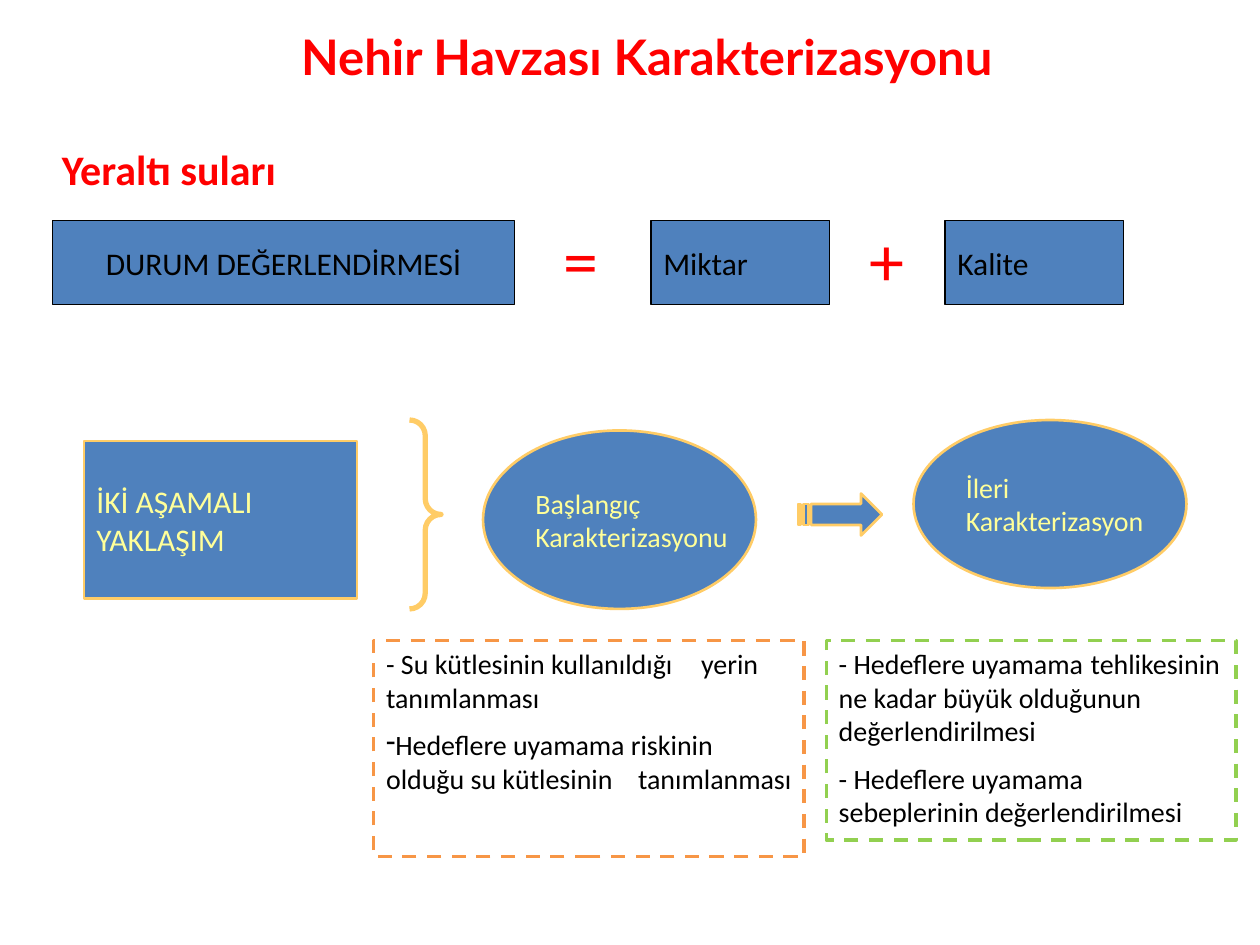
"""Build the groundwater characterisation slide on a grid of 120 by 90 cells."""
from lxml import etree
from pptx import Presentation
from pptx import util as u
from pptx.dml.color import RGBColor
from pptx.enum import dml, shapes, text
from pptx.oxml.ns import qn

COLORS = {"red": "FF0000", "black": "000000", "blue": "4F81BD", "gold": "FFCC66",
          "cream": "FFFF99", "white": "FFFFFF", "orange": "F79646", "green": "92D050"}
COLUMNS, ROWS = 120, 90
CELL = u.Inches(10) // COLUMNS
RECT, OVAL = shapes.MSO_SHAPE.RECTANGLE, shapes.MSO_SHAPE.OVAL
LEFT, CENTER = text.PP_ALIGN.LEFT, text.PP_ALIGN.CENTER

TITLE = ("Nehir Havzası Karakterizasyonu", (16.6, 1.9, 90, 6.8))
LABELS = [
    ("Yeraltı suları", (4.7, 13.1, 34, 6), 24, True),
    ("=", (52.5, 20, 14, 9.2), 40, False),
    ("+", (81.6, 20, 14, 9.2), 40, False),
]
TERMS = [
    ("DURUM DEĞERLENDİRMESİ", (5, 21, 44, 8), CENTER),
    ("Miktar", (62, 21, 17, 8), LEFT),
    ("Kalite", (90, 21, 17, 8), LEFT),
]
STAGES = [
    (OVAL, ["Başlangıç", "Karakterizasyonu"], (46, 41, 26, 17), 16),
    (OVAL, ["İleri", "Karakterizasyon"], (87, 40, 26, 16), 16),
    (RECT, ["İKİ AŞAMALI", "YAKLAŞIM"], (8, 42, 26, 15), 18),
]
TASKS = [
    ("orange", (35.6, 61, 41, 20.6), [
        ("- Su kütlesinin kullanıldığı \tyerin tanımlanması", False),
        ("Hedeflere uyamama riskinin \tolduğu su kütlesinin \ttanımlanması", True)]),
    ("green", (78.7, 61, 39, 19), [
        ("- Hedeflere uyamama \ttehlikesinin ne kadar büyük olduğunun değerlendirilmesi", False),
        ("- Hedeflere uyamama \tsebeplerinin değerlendirilmesi", False)]),
]
BRACE = (39, 40, 3, 18)
ARROW_ORIGIN = (76, 47)
ARROW_CONTOURS = [
    [(24, 0), (24, 4), (5, 4), (5, 12), (24, 12), (24, 16), (32, 8)],
    [(2, 4), (2, 12), (4, 12), (4, 4)],
    [(0, 4), (0, 12), (1, 12), (1, 4)],
]


def cells(values):
    return [round(value * CELL) for value in values]


def rgb(name):
    return RGBColor.from_string(COLORS[name])


def style(shape, fill, line, width):
    shape.shadow.inherit = False
    if fill:
        shape.fill.solid()
        shape.fill.fore_color.rgb = rgb(fill)
    else:
        shape.fill.background()
    shape.line.color.rgb = rgb(line)
    shape.line.width = u.Pt(width)


def write(shape, lines, size, color, align=LEFT, bold=False, wrap=True,
          anchor=text.MSO_ANCHOR.MIDDLE, font="Calibri"):
    frame = shape.text_frame
    frame.word_wrap = wrap
    frame.vertical_anchor = anchor
    frame.text = "\n".join(lines)
    for para in frame.paragraphs:
        para.alignment = align
        para.font.name, para.font.size, para.font.bold = font, u.Pt(size), bold
        para.font.color.rgb = rgb(color)


def add_tab_and_bullet(para, bulleted):
    props = para._p.get_or_add_pPr()
    tabs = etree.Element(qn("a:tabLst"))
    etree.SubElement(tabs, qn("a:tab"), pos=str(u.Inches(0.1)), algn="l")
    props.insert(0, tabs)
    if bulleted:
        bullet = etree.Element(qn("a:buChar"), char="-")
        props.insert(0, bullet)


def add_task(page, color, place, items):
    box = page.shapes.add_shape(RECT, *cells(place))
    style(box, "white", color, 2)
    box.line.dash_style = dml.MSO_LINE.DASH
    frame = box.text_frame
    frame.text = "\n".join(line for line, _ in items)
    for index, (para, (_, bulleted)) in enumerate(zip(frame.paragraphs, items)):
        add_tab_and_bullet(para, bulleted)
        if index:
            para.space_before = u.Pt(8)
        para.alignment = LEFT
        para.font.name, para.font.size = "Calibri", u.Pt(16)
        para.font.color.rgb = rgb("black")
    frame.word_wrap = True
    frame.vertical_anchor = text.MSO_ANCHOR.TOP


def add_striped_arrow(page):
    head, *stripes = ARROW_CONTOURS
    builder = page.shapes.build_freeform(*head[0], scale=CELL / 4)
    builder.add_line_segments(head[1:], close=True)
    for stripe in stripes:
        builder.move_to(*stripe[0])
        builder.add_line_segments(stripe[1:], close=True)
    style(builder.convert_to_shape(*cells(ARROW_ORIGIN)), "blue", "gold", 1.5)


def main():
    deck = Presentation()
    deck.slide_width, deck.slide_height = COLUMNS * CELL, ROWS * CELL
    page = deck.slides.add_slide(deck.slide_layouts[5])

    heading, place = TITLE
    title = page.shapes.title
    title.left, title.top, title.width, title.height = cells(place)
    write(title, [heading], 28, "red", CENTER, bold=True, font="Lato")

    for label, place, size, bold in LABELS:
        box = page.shapes.add_textbox(*cells(place))
        write(box, [label], size, "red", bold=bold, anchor=text.MSO_ANCHOR.TOP)

    for term, place, align in TERMS:
        box = page.shapes.add_shape(RECT, *cells(place))
        style(box, "blue", "black", 0.75)
        write(box, [term], 18, "black", align, wrap=False)

    for kind, lines, place, size in STAGES:
        stage = page.shapes.add_shape(kind, *cells(place))
        style(stage, "blue", "gold", 1.5)
        write(stage, lines, size, "cream", wrap=False)

    brace = page.shapes.add_shape(shapes.MSO_SHAPE.RIGHT_BRACE, *cells(BRACE))
    brace.adjustments[0] = 0.5
    style(brace, None, "gold", 3)
    add_striped_arrow(page)

    for task in TASKS:
        add_task(page, *task)
    deck.save("out.pptx")


if __name__ == "__main__":
    main()
